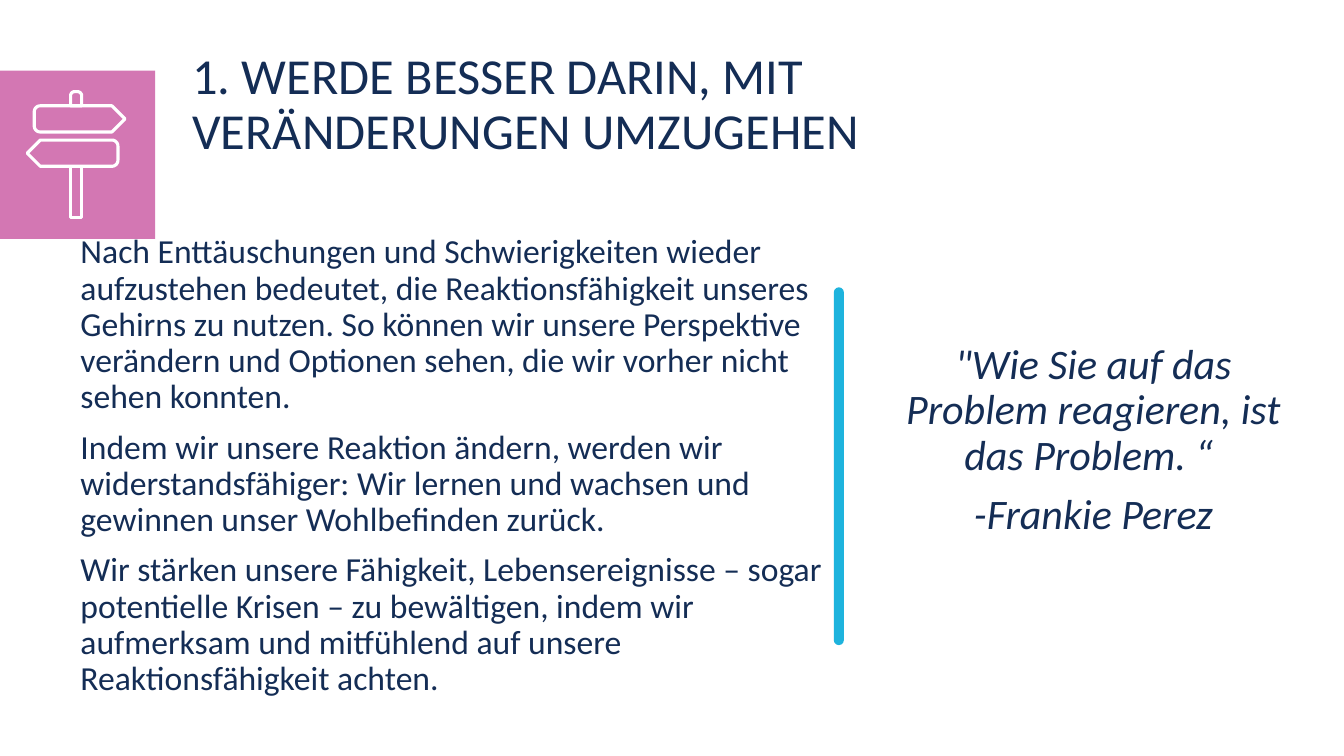
"""Build a slide on coping with change: signpost tile, text and quote."""
from dataclasses import dataclass
from math import cos, pi, sin

from lxml import etree
from pptx import Presentation
from pptx.dml.color import RGBColor
from pptx.enum.shapes import MSO_SHAPE
from pptx.enum.text import MSO_ANCHOR, PP_ALIGN
from pptx.oxml.ns import qn
from pptx.util import Inches, Pt

RECT, ROUND = MSO_SHAPE.RECTANGLE, MSO_SHAPE.ROUNDED_RECTANGLE
TOP, MIDDLE = MSO_ANCHOR.TOP, MSO_ANCHOR.MIDDLE
LEFT, CENTER = PP_ALIGN.LEFT, PP_ALIGN.CENTER

NAVY = RGBColor(0x14, 0x2D, 0x55)
PINK = RGBColor(0xC5, 0x4A, 0x9A)
CYAN = RGBColor(0x1E, 0xB3, 0xDD)
WHITE = RGBColor(0xFF, 0xFF, 0xFF)

FONT = "Calibri"
CELL = Inches(0.1)


@dataclass(frozen=True)
class Box:
    """A place in grid columns and rows."""
    col: float
    row: float
    cols: float
    rows: float

    def emu(self) -> list[int]:
        """Return left, top, width and height as lengths."""
        return [round(n * CELL) for n in (self.col, self.row, self.cols, self.rows)]


@dataclass(frozen=True)
class Copy:
    """A block of text with its look."""
    box: Box
    size: int
    lines: tuple[str, ...]
    align: PP_ALIGN = LEFT
    anchor: MSO_ANCHOR = TOP
    italic: bool = False


@dataclass(frozen=True)
class Board:
    """A sign board running from its round tail to its tip."""
    tail: float
    side: int
    row: float


POST = Box(7, 16.5, 1.1, 5.1)
KNOB = Box(7, 9.1, 1.1, 1.4)
BOARDS = (Board(3.4, 1, 10.5), Board(11.7, -1, 13.9))

TEXTS = (
    Copy(Box(18.1, 4.6, 93.4, 7.6), 36,
         ("1. WERDE BESSER DARIN, MIT VERÄNDERUNGEN UMZUGEHEN",)),
    Copy(Box(7, 22.8, 80.4, 38.4), 24, (
        "Nach Enttäuschungen und Schwierigkeiten wieder aufzustehen bedeutet, "
        "die Reaktionsfähigkeit unseres Gehirns zu nutzen. So können wir unsere "
        "Perspektive verändern und Optionen sehen, die wir vorher nicht sehen konnten.",
        "Indem wir unsere Reaktion ändern, werden wir widerstandsfähiger: "
        "Wir lernen und wachsen und gewinnen unser Wohlbefinden zurück.",
        "Wir stärken unsere Fähigkeit, Lebensereignisse – sogar potentielle Krisen – "
        "zu bewältigen, indem wir aufmerksam und mitfühlend auf unsere "
        "Reaktionsfähigkeit achten.")),
    Copy(Box(88.2, 28.5, 40.5, 30.5), 30,
         ('"Wie Sie auf das Problem reagieren, ist das Problem. “ ', "-Frankie Perez"),
         CENTER, MIDDLE, True),
)


def block(slide, kind: MSO_SHAPE, box: Box, color: RGBColor):
    """Draw a filled shape with no line."""
    shape = slide.shapes.add_shape(kind, *box.emu())
    shape.shadow.inherit = False
    shape.fill.solid()
    shape.fill.fore_color.rgb = color
    shape.line.fill.background()
    return shape


def fade(shape, share: int) -> None:
    """Set the opacity of a solid fill in percent."""
    tone = shape.fill._xPr.find(qn("a:solidFill"))[0]
    etree.SubElement(tone, qn("a:alpha")).set("val", str(share * 1000))


def arc(x: float, y: float, radius: float, start: int) -> list[tuple[float, float]]:
    """Return points on a quarter turn that starts at an angle."""
    turns = [(start + step * 90 / 8) * pi / 180 for step in range(9)]
    return [(x + radius * cos(turn), y + radius * sin(turn)) for turn in turns]


def trace(slide, points: list[tuple[float, float]]) -> None:
    """Draw a closed white outline through grid points."""
    dots = [(round(x * CELL), round(y * CELL)) for x, y in points]
    path = slide.shapes.build_freeform(*dots[0], scale=1.0)
    path.add_line_segments(dots[1:], close=True)
    shape = path.convert_to_shape()
    shape.shadow.inherit = False
    shape.fill.background()
    shape.line.color.rgb = WHITE
    shape.line.width = Pt(2.25)


def sign(slide, board: Board) -> None:
    """Draw a board with two round corners and a pointed end."""
    wide, high, neck, curve = 9, 2.6, 7.7, 0.6
    edge = arc(curve, high - curve, curve, 90) + arc(curve, curve, curve, 180)
    edge += [(neck, 0), (wide, high / 2), (neck, high)]
    trace(slide, [(board.tail + board.side * x, board.row + y) for x, y in edge])


def stand(slide) -> None:
    """Draw the knob and the post of the sign."""
    curve, end = 0.4, KNOB.col + KNOB.cols
    base, mid = KNOB.row + KNOB.rows, KNOB.row + curve
    trace(slide, [(KNOB.col, base), *arc(KNOB.col + curve, mid, curve, 180),
                  *arc(end - curve, mid, curve, 270), (end, base)])
    right, foot = POST.col + POST.cols, POST.row + POST.rows
    trace(slide, [(POST.col, POST.row), (POST.col, foot), (right, foot),
                  (right, POST.row)])


def write(slide, copy: Copy) -> None:
    """Set a block of text."""
    frame = slide.shapes.add_textbox(*copy.box.emu()).text_frame
    frame.word_wrap = True
    frame.vertical_anchor = copy.anchor
    for spot, line in enumerate(copy.lines):
        para = frame.add_paragraph() if spot else frame.paragraphs[0]
        para.alignment = copy.align
        para.line_spacing = 0.9
        para.space_before = Pt(10 if spot else 0)
        run = para.add_run()
        run.text = line
        run.font.name = FONT
        run.font.size = Pt(copy.size)
        run.font.italic = copy.italic
        run.font.color.rgb = NAVY


def main() -> None:
    """Build and save the slide."""
    deck = Presentation()
    deck.slide_width, deck.slide_height = Inches(13.33), Inches(7.5)
    slide = deck.slides.add_slide(deck.slide_layouts[6])
    fade(block(slide, RECT, Box(0, 7, 15.4, 16.7), PINK), 75)
    block(slide, ROUND, Box(82.7, 28.5, 1, 35.5), CYAN).adjustments[0] = 0.5
    for copy in TEXTS:
        write(slide, copy)
    for board in BOARDS:
        sign(slide, board)
    stand(slide)
    deck.save("out.pptx")


if __name__ == "__main__":
    main()
